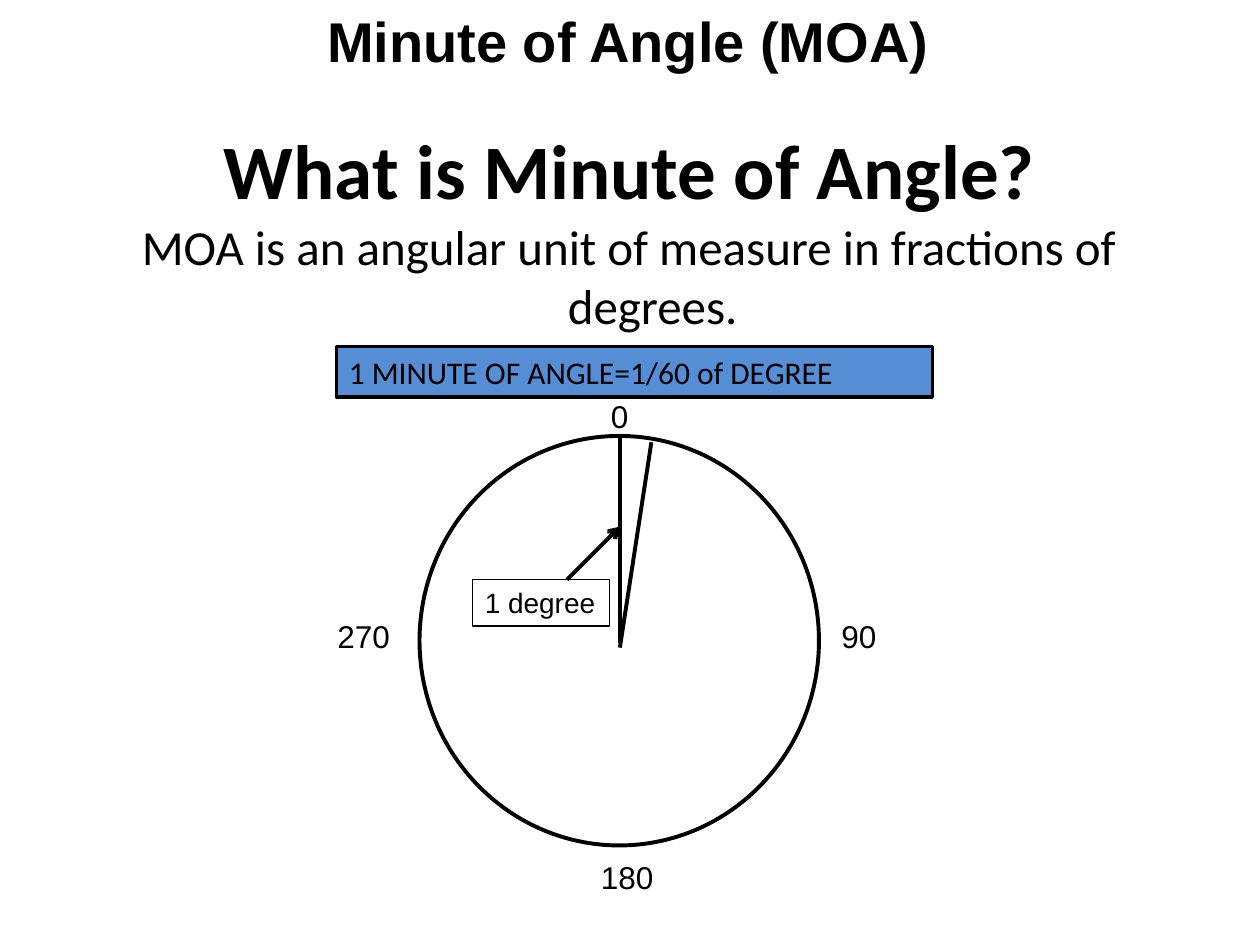
import dataclasses

import pptx
import pptx.dml.color
import pptx.enum.shapes
import pptx.enum.text
import pptx.oxml
import pptx.oxml.ns
import pptx.util

Inches = pptx.util.Inches
Pt = pptx.util.Pt
Shape = pptx.enum.shapes.MSO_SHAPE
Align = pptx.enum.text.PP_ALIGN


@dataclasses.dataclass(frozen=True)
class Theme:
    """Hold the colours, fonts and sizes of the slide."""
    ink: str = "000000"
    blue: str = "558ED5"
    sans: str = "Arial"
    body: str = "Calibri"
    title: int = 32
    head: int = 44
    lead: int = 28
    label: int = 18
    note: int = 16
    thick: float = 2.25
    edge: float = 2
    thin: float = 0.75


THEME = Theme()


def color(code):
    """Turn a hex code into a colour."""
    return pptx.dml.color.RGBColor.from_string(code)


def write(shape, text, size, font=THEME.sans, bold=False,
          align=Align.LEFT, wrap=False, hang=0):
    """Put one styled run of text into a shape."""
    frame = shape.text_frame
    frame.word_wrap = wrap
    frame.vertical_anchor = pptx.enum.text.MSO_ANCHOR.TOP
    para = frame.paragraphs[0]
    para.alignment = align
    if hang:
        props = para._p.get_or_add_pPr()
        props.set("marL", str(Inches(hang)))
        props.set("indent", str(-Inches(hang)))
    run = para.add_run()
    run.text = text
    run.font.name = font
    run.font.size = Pt(size)
    run.font.bold = bold
    run.font.color.rgb = color(THEME.ink)


def label(slide, box, text, size, **style):
    """Add a text box."""
    shape = slide.shapes.add_textbox(*map(Inches, box))
    write(shape, text, size, **style)


def outline(slide, kind, box, width, fill=None):
    """Add a black-edged shape, filled or clear."""
    shape = slide.shapes.add_shape(kind, *map(Inches, box))
    shape.shadow.inherit = False
    if fill:
        shape.fill.solid()
        shape.fill.fore_color.rgb = color(fill)
    else:
        shape.fill.background()
    shape.line.color.rgb = color(THEME.ink)
    shape.line.width = Pt(width)
    return shape


def line(slide, start, end, arrow=False):
    """Add a straight line, with an arrowhead at its end if asked."""
    link = slide.shapes.add_connector(
        pptx.enum.shapes.MSO_CONNECTOR.STRAIGHT,
        *map(Inches, start + end))
    link.line.color.rgb = color(THEME.ink)
    link.line.width = Pt(THEME.thick)
    if arrow:
        tip = pptx.oxml.parse_xml(
            f'<a:tailEnd {pptx.oxml.ns.nsdecls("a")} type="arrow"/>')
        link.line._get_or_add_ln().append(tip)
    link._element.spPr.append(pptx.oxml.parse_xml(
        f'<a:effectLst {pptx.oxml.ns.nsdecls("a")}/>'))


def heads(slide):
    """Add the title, the question and its answer."""
    label(slide, (0.5, 0.92, 9, 0.92), "What is Minute of Angle?",
          THEME.head, font=THEME.body, bold=True, align=Align.CENTER,
          wrap=True, hang=0.38)
    label(slide, (2.48, 0, 5.01, 0.64), "Minute of Angle (MOA)",
          THEME.title, bold=True, align=Align.CENTER)
    label(slide, (0.49, 1.67, 9, 1.08),
          "MOA is an angular unit of measure in fractions of degrees.",
          THEME.lead, font=THEME.body, align=Align.CENTER,
          wrap=True, hang=0.38)


def dial(slide):
    """Add the circle, its marks and the one-degree wedge."""
    outline(slide, Shape.OVAL, (3.33, 3.46, 3.17, 3.25), THEME.thick)
    marks = (("0", 4.75, 3.1, 0.34), ("90", 6.58, 4.85, 0.5),
             ("180", 4.67, 6.76, 0.62), ("270", 2.58, 4.85, 0.62))
    for text, left, top, width in marks:
        label(slide, (left, top, width, 0.4), text, THEME.label)
    line(slide, (4.92, 3.46), (4.92, 5.1))
    line(slide, (5.17, 3.51), (4.92, 5.14))
    note = outline(slide, Shape.RECTANGLE, (3.75, 4.6, 1.09, 0.37),
                   THEME.thin)
    write(note, "1 degree", THEME.note)
    line(slide, (4.5, 4.6), (4.92, 4.18), arrow=True)


def banner(slide):
    """Add the blue bar with the rule."""
    bar = outline(slide, Shape.RECTANGLE, (2.67, 2.75, 4.73, 0.4),
                  THEME.edge, THEME.blue)
    write(bar, "1 MINUTE OF ANGLE=1/60 of DEGREE", THEME.label,
          font=THEME.body, wrap=True)


def main():
    """Build and save the slide."""
    deck = pptx.Presentation()
    deck.slide_width = Inches(10)
    deck.slide_height = Inches(7.5)
    slide = deck.slides.add_slide(deck.slide_layouts[6])
    heads(slide)
    dial(slide)
    banner(slide)
    deck.save("out.pptx")


if __name__ == "__main__":
    main()
